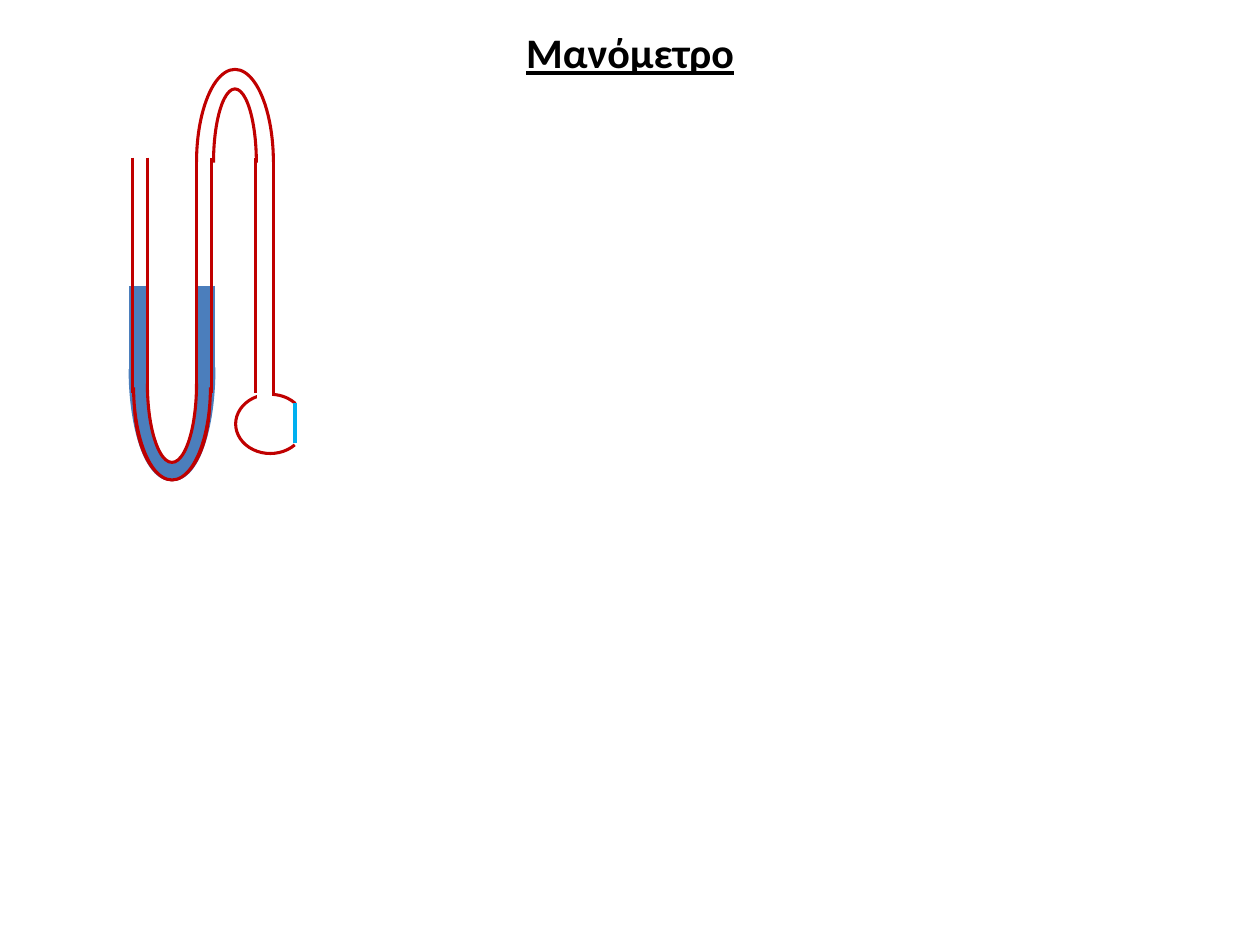
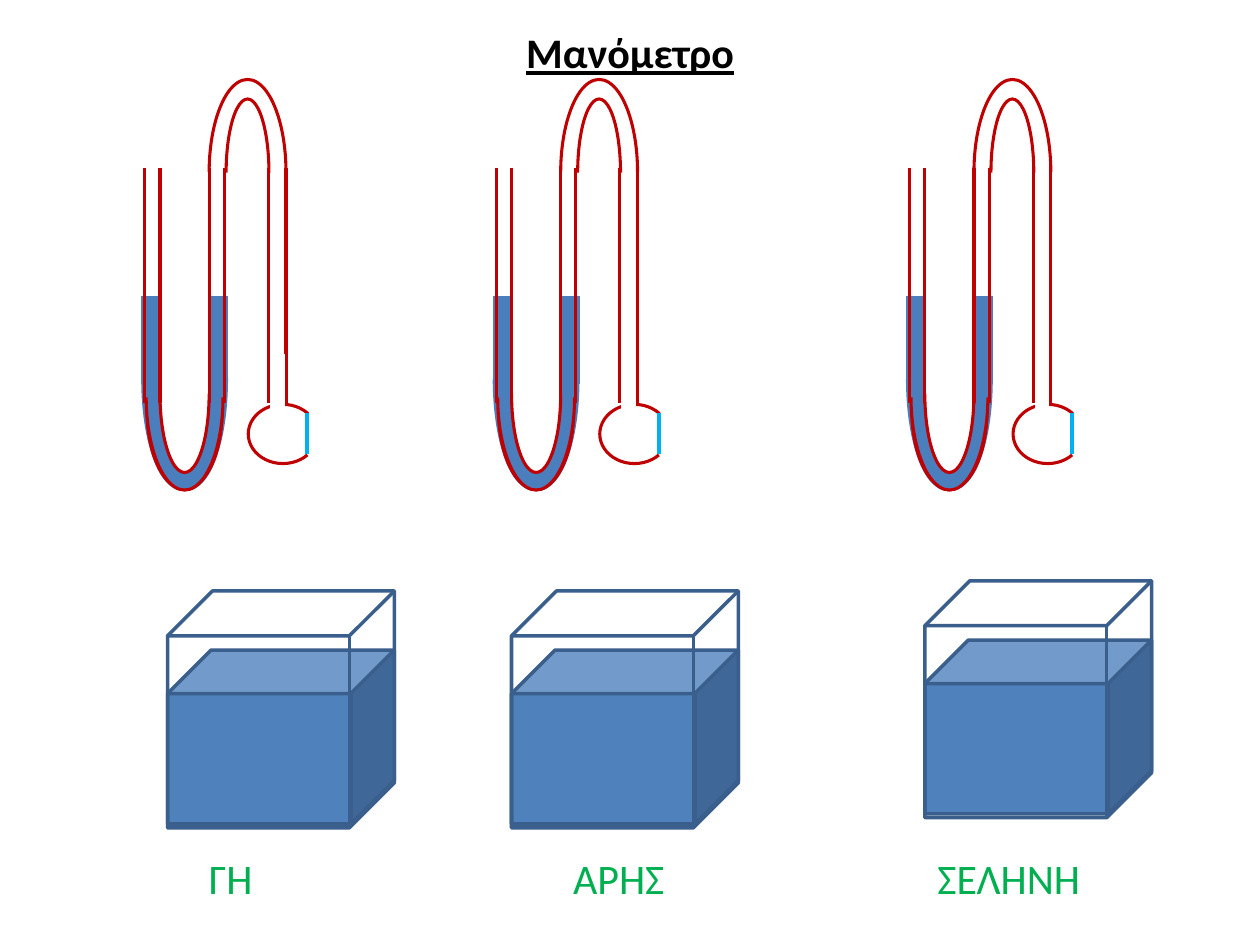
from dataclasses import dataclass

from lxml import etree
from pptx import Presentation
from pptx.dml.color import RGBColor
from pptx.enum.shapes import MSO_CONNECTOR, MSO_SHAPE
from pptx.enum.text import PP_ALIGN
from pptx.oxml.ns import qn
from pptx.util import Inches, Pt

ARC = MSO_SHAPE.ARC
CUBE = MSO_SHAPE.CUBE
STRAIGHT = MSO_CONNECTOR.STRAIGHT
CENTER = PP_ALIGN.CENTER
LEFT = PP_ALIGN.LEFT


@dataclass(frozen=True)
class Theme:
    font: str = "Calibri"
    text_size: float = 24
    title: str = "000000"
    label: str = "00B050"
    glass: str = "C00000"
    liquid: str = "4B7EBC"
    membrane: str = "00B0F0"
    background: str = "FFFFFF"
    tank_fill: str = "4F81BD"
    tank_line: str = "3A5F8C"
    glass_width: float = 1.75
    thin_width: float = 0.75
    liquid_width: float = 10
    gap_width: float = 8.5
    membrane_width: float = 2.25
    tank_width: float = 2


THEME = Theme()
HALF_TURN = (270, 89.9)
TANK_WIDTH = 1.8


def style_line(line, color, width):
    line.color.rgb = RGBColor.from_string(color)
    line.width = Pt(width)


def add_line(slide, start, end, color, width):
    connector = slide.shapes.add_connector(
        STRAIGHT, *(Inches(value) for value in (*start, *end)))
    style_line(connector.line, color, width)
    etree.SubElement(connector._element.spPr, qn("a:effectLst"))


def add_outline(slide, kind, box, color, width, fill=None):
    shape = slide.shapes.add_shape(kind, *(Inches(value) for value in box))
    shape.shadow.inherit = False
    if fill:
        shape.fill.solid()
        shape.fill.fore_color.rgb = RGBColor.from_string(fill)
    else:
        shape.fill.background()
    style_line(shape.line, color, width)
    return shape


def add_arc(slide, box, rotation, angles, color, width):
    arc = add_outline(slide, ARC, box, color, width)
    arc.rotation = rotation
    for index, degrees in enumerate(angles):
        arc.adjustments[index] = degrees * 0.6  # 60000 units a degree, scaled by 100000


def add_text(slide, box, text, color, alignment=LEFT, heading=False):
    text_box = slide.shapes.add_textbox(*(Inches(value) for value in box))
    text_frame = text_box.text_frame
    text_frame.word_wrap = True
    text_frame.text = text
    paragraph = text_frame.paragraphs[0]
    paragraph.alignment = alignment
    font = paragraph.runs[0].font
    font.name = THEME.font
    font.size = Pt(THEME.text_size)
    font.color.rgb = RGBColor.from_string(color)
    font.bold = heading
    font.underline = heading


def add_title(slide):
    add_text(slide, (2.81, 0.16, 4.38, 0.63), "Μανόμετρο", THEME.title, CENTER, True)


def add_manometer(slide, left, top):
    """Draw a manometer whose open tube end has its corner at left, top."""
    def vertical(x, y, length, color, width):
        add_line(slide, (left + x, top + y), (left + x, top + y + length), color, width)

    def bend(x, y, width, height, rotation, angles=HALF_TURN,
             color=THEME.glass, line_width=THEME.glass_width):
        add_arc(slide, (left + x, top + y, width, height), rotation, angles,
                color, line_width)

    # Liquid in the U tube
    bend(0.04, 0.86, 0.55, 1.64, 180, (177.2, 0), THEME.liquid, THEME.liquid_width)
    for y in (1.33, 1.02):
        for x in (0.04, 0.59):
            vertical(x, y, 0.39, THEME.liquid, THEME.liquid_width)

    # Glass: lower bend, straight walls, upper bend
    bend(-0.42, 1.52, 1.47, 0.61, 90)
    bend(-0.31, 1.6, 1.25, 0.39, 90)
    bend(-0.31, 1.63, 1.25, 0.61, 90, line_width=THEME.thin_width)
    for x in (0, 0.12, 0.51, 0.63, 0.98, 1.12):
        vertical(x, 0, 1.87, THEME.glass, THEME.glass_width)
    bend(0.08, -0.27, 1.47, 0.61, 270)
    bend(0.23, -0.13, 1.17, 0.34, 270)

    # Pressure capsule, its opening to the tube and its membrane
    bend(0.86, 1.84, 0.47, 0.55, 90, (310.6, 230.88))
    vertical(1.05, 1.48, 0.55, THEME.background, THEME.gap_width)
    vertical(1.29, 1.95, 0.32, THEME.membrane, THEME.membrane_width)


def add_tank(slide, left, top):
    add_outline(slide, CUBE, (left, top + 0.47, TANK_WIDTH, 1.38),
                THEME.tank_line, THEME.tank_width, THEME.tank_fill)
    glass = add_outline(slide, CUBE, (left, top, TANK_WIDTH, 1.88),
                        THEME.tank_line, THEME.tank_width)
    glass.adjustments[0] = 0.198


def main():
    presentation = Presentation()
    presentation.slide_width = Inches(10)
    presentation.slide_height = Inches(7.5)
    blank = presentation.slide_layouts[6]

    # Slide 1: the instrument
    slide = presentation.slides.add_slide(blank)
    add_manometer(slide, 1.05, 1.25)
    add_title(slide)

    # Slide 2: one instrument and one tank for each celestial body
    slide = presentation.slides.add_slide(blank)
    add_title(slide)
    # name, manometer left, tank left, tank top, label left, label width
    bodies = [
        ("ΓΗ", 1.15, 1.33, 4.69, 1.56, 1.09),
        ("ΑΡΗΣ", 3.94, 4.06, 4.69, 4.45, 1.09),
        ("ΣΕΛΗΝΗ", 7.22, 7.34, 4.61, 7.34, 1.48),
    ]
    for name, manometer_left, tank_left, tank_top, label_left, label_width in bodies:
        add_tank(slide, tank_left, tank_top)
        add_manometer(slide, manometer_left, 1.33)
        add_text(slide, (label_left, 6.72, label_width, 0.55), name, THEME.label)

    presentation.save("out.pptx")


if __name__ == "__main__":
    main()
